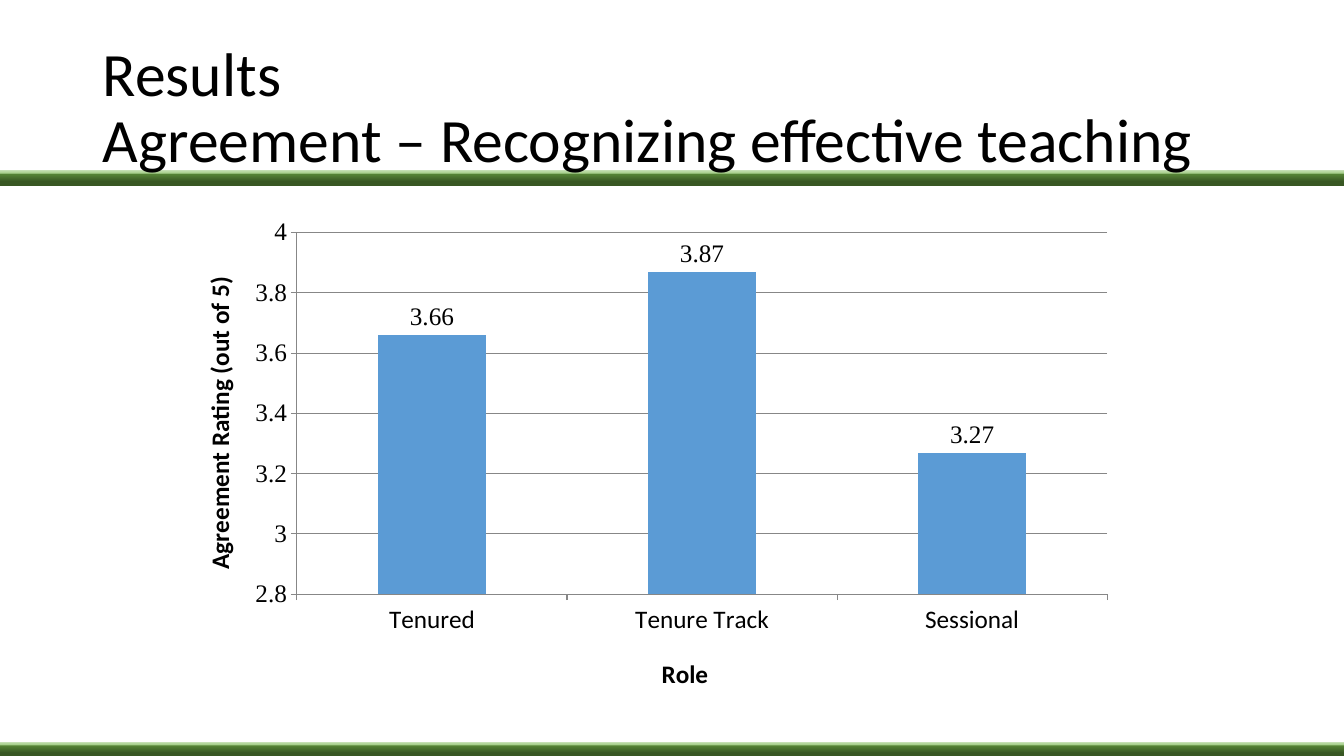
import lxml.etree
import pptx
import pptx.chart.data
import pptx.dml.color
import pptx.enum.chart
import pptx.enum.shapes
import pptx.enum.text
import pptx.oxml
import pptx.oxml.ns
import pptx.util

Inches, Pt = pptx.util.Inches, pptx.util.Pt
qn = pptx.oxml.ns.qn

TITLE_LINES = ["Results", "Agreement – Recognizing effective teaching"]
RATINGS = {"Tenured": 3.66, "Tenure Track": 3.87, "Sessional": 3.27}
CATEGORY_TITLE = "Role"
VALUE_TITLE = "Agreement Rating (out of 5)"

COLORS = {"text": "000000", "bar": "5B9BD5", "line": "878787"}
BAND_STOPS = [(30, "385723"), (74, "548235"), (83, "A9D18E"), (100, "C5E0B4")]
BAND_TOPS = [1.69, 7.36]
BAND_HEIGHT = 0.16
SLIDE_WIDTH, SLIDE_HEIGHT = 13.33, 7.5

# Fractions of the chart area
PLOT_LAYOUT = {"x": 0.125, "y": 0.05, "w": 0.855, "h": 0.725}
CATEGORY_TITLE_LAYOUT = {"x": 0.505, "y": 0.89}
VALUE_TITLE_LAYOUT = {"x": 0.02, "y": 0.13}


def rgb(name):
    return pptx.dml.color.RGBColor.from_string(COLORS[name])


def style_font(font, size, face, bold=False):
    font.size = Pt(size)
    font.name = face
    font.bold = bold
    font.color.rgb = rgb("text")


def add_band(page, top):
    band = page.shapes.add_shape(
        pptx.enum.shapes.MSO_SHAPE.RECTANGLE,
        0, Inches(top), Inches(SLIDE_WIDTH), Inches(BAND_HEIGHT))
    band.shadow.inherit = False
    band.line.fill.background()
    band.fill.gradient()
    band.fill.gradient_angle = 90
    stops = band._element.spPr.find(".//" + qn("a:gsLst"))
    for stop in list(stops):
        stops.remove(stop)
    for position, color in BAND_STOPS:
        stop = lxml.etree.SubElement(stops, qn("a:gs"), pos=str(position * 1000))
        lxml.etree.SubElement(stop, qn("a:srgbClr"), val=color)
    return band


def place(element, layout, inner=False):
    """Give a plot area or an axis title a fixed place in the chart."""
    for old in element.findall(qn("c:layout")):
        element.remove(old)
    holder = lxml.etree.Element(qn("c:layout"))
    manual = lxml.etree.SubElement(holder, qn("c:manualLayout"))
    if inner:
        lxml.etree.SubElement(manual, qn("c:layoutTarget"), val="inner")
    for side in "xy":
        lxml.etree.SubElement(manual, qn(f"c:{side}Mode"), val="edge")
    for key, value in layout.items():
        lxml.etree.SubElement(manual, qn(f"c:{key}"), val=str(value))
    text = element.find(qn("c:tx"))
    if text is None:
        element.insert(0, holder)
    else:
        text.addnext(holder)


def style_axis(axis, title, layout, face):
    style_font(axis.tick_labels.font, 18, face)
    axis.major_tick_mark = pptx.enum.chart.XL_TICK_MARK.OUTSIDE
    axis.minor_tick_mark = pptx.enum.chart.XL_TICK_MARK.NONE
    axis.format.line.color.rgb = rgb("line")
    axis.format.line.width = Pt(0.75)
    span = axis.axis_title.text_frame.paragraphs[0].add_run()
    span.text = title
    style_font(span.font, 18, "Calibri", bold=True)
    place(axis.axis_title._element, layout)


def add_rating_chart(page):
    data = pptx.chart.data.CategoryChartData()
    data.categories = list(RATINGS)
    data.add_series("Series 1", list(RATINGS.values()))
    chart = page.shapes.add_chart(
        pptx.enum.chart.XL_CHART_TYPE.COLUMN_CLUSTERED,
        Inches(1.77), Inches(2.06), Inches(9.4), Inches(4.95), data).chart
    style_font(chart.font, 18, "Calibri")
    chart.has_legend = False
    chart.has_title = False

    style_axis(chart.category_axis, CATEGORY_TITLE, CATEGORY_TITLE_LAYOUT, "Calibri")
    values = chart.value_axis
    style_axis(values, VALUE_TITLE, VALUE_TITLE_LAYOUT, "Times New Roman")
    frame = values.axis_title.text_frame._txBody.find(qn("a:bodyPr"))
    frame.set("rot", "-5400000")
    frame.set("vert", "horz")
    values.minimum_scale, values.maximum_scale, values.major_unit = 2.8, 4, 0.2
    values.has_major_gridlines = True
    values.major_gridlines.format.line.color.rgb = rgb("line")
    values.major_gridlines.format.line.width = Pt(0.75)

    plot = chart.plots[0]
    plot.gap_width = 150
    plot.vary_by_categories = False
    series = plot.series[0]
    series.format.fill.solid()
    series.format.fill.fore_color.rgb = rgb("bar")
    labels = series.data_labels
    labels.show_value = True
    labels.position = pptx.enum.chart.XL_LABEL_POSITION.OUTSIDE_END
    style_font(labels.font, 18, "Times New Roman")
    place(chart._chartSpace.find(".//" + qn("c:plotArea")), PLOT_LAYOUT, inner=True)


def fill_title(title):
    title.left, title.top = Inches(0.92), Inches(0.36)
    title.width, title.height = Inches(11.5), Inches(1.45)
    frame = title.text_frame
    frame.word_wrap = True
    frame.auto_size = pptx.enum.text.MSO_AUTO_SIZE.NONE
    frame.vertical_anchor = pptx.enum.text.MSO_ANCHOR.MIDDLE
    para = frame.paragraphs[0]
    para.alignment = pptx.enum.text.PP_ALIGN.LEFT
    para.line_spacing = 0.9
    for number, line in enumerate(TITLE_LINES):
        if number:
            para.add_line_break()
        span = para.add_run()
        span.text = line
        style_font(span.font, 44, "Calibri")


def main():
    deck = pptx.Presentation()
    deck.slide_width, deck.slide_height = Inches(SLIDE_WIDTH), Inches(SLIDE_HEIGHT)
    page = deck.slides.add_slide(deck.slide_layouts[5])
    title = page.shapes.title
    for top in BAND_TOPS:
        # Bands lie behind the title
        title._element.addprevious(add_band(page, top)._element)
    fill_title(title)
    add_rating_chart(page)
    deck.save("out.pptx")


if __name__ == "__main__":
    main()
